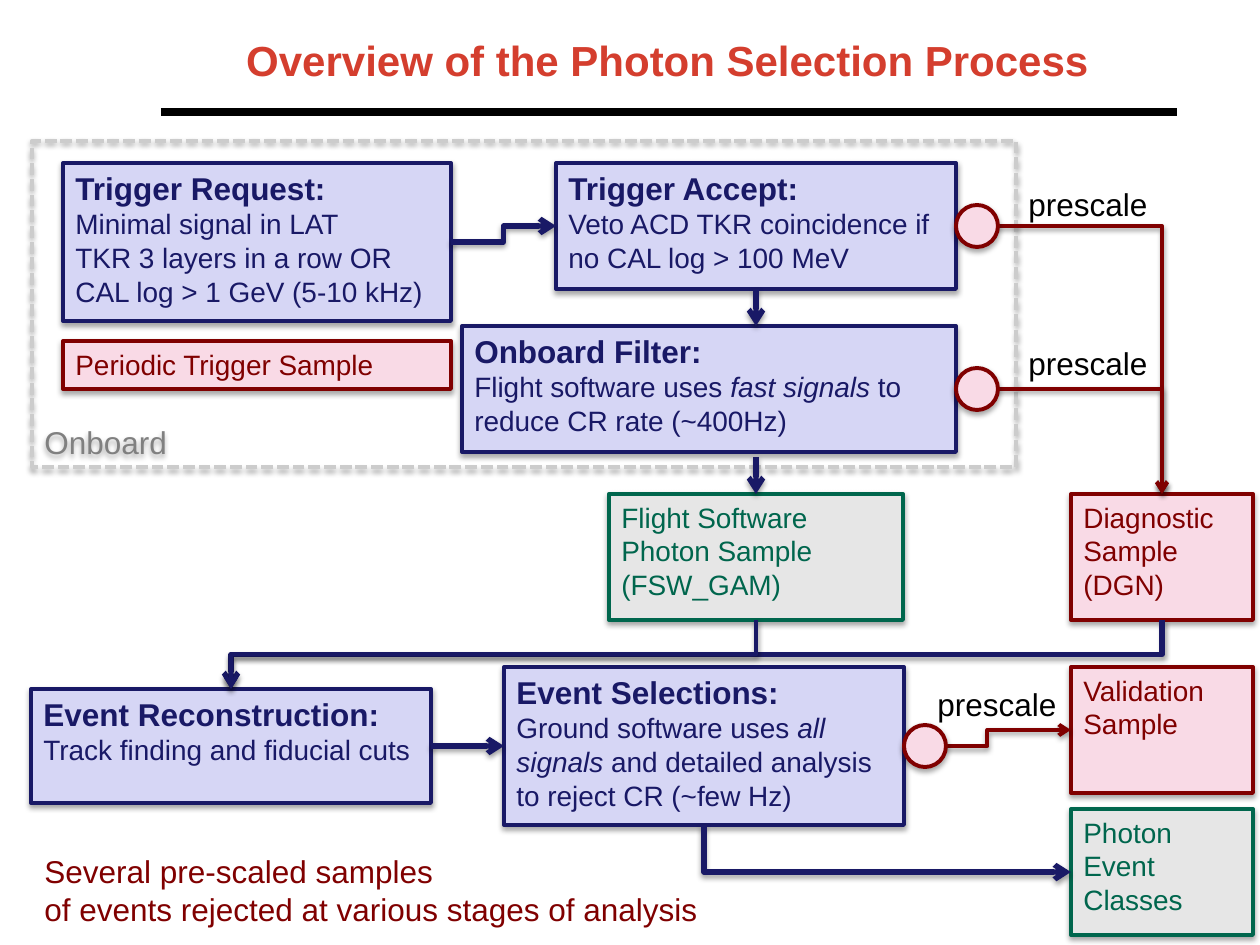
import pptx
import pptx.util
import pptx.dml.color
import pptx.enum.dml
import pptx.enum.shapes
import pptx.enum.text
import pptx.oxml
import pptx.oxml.ns

Pt = pptx.util.Pt
SHAPE = pptx.enum.shapes.MSO_SHAPE
CONNECTOR = pptx.enum.shapes.MSO_CONNECTOR
ANCHOR = pptx.enum.text.MSO_ANCHOR
ALIGN = pptx.enum.text.PP_ALIGN
PX = 914400 // 126
TOP, LEFT, BOTTOM, RIGHT = range(4)

COLORS = {
    "title": "D43E2E", "black": "000000", "navy": "191966", "lavender": "D6D6F5",
    "maroon": "800000", "pink": "F9DAE6", "green": "00664D", "light": "E6E6E6",
    "dash": "CCCCCC", "gray": "808080",
}
STYLES = {
    "step": ("lavender", "navy"),
    "sample": ("pink", "maroon"),
    "photon": ("light", "green"),
}

TITLE = "Overview of the Photon Selection Process"
FRAME = (32, 141, 984, 326)
BOXES = {
    "request": ("step", (63, 163, 388, 158), "Trigger Request:",
                ["Minimal signal in LAT", "TKR 3 layers in a row OR",
                 "CAL log > 1 GeV (5-10 kHz)"]),
    "accept": ("step", (556, 163, 400, 126), "Trigger Accept:",
               ["Veto ACD TKR coincidence if", "no CAL log > 100 MeV"]),
    "filter": ("step", (462, 326, 494, 126), "Onboard Filter:",
               ["Flight software uses *fast signals* to reduce CR rate (~400Hz)"]),
    "reconstruction": ("step", (31, 689, 400, 114), "Event Reconstruction:",
                       ["Track finding and fiducial cuts"]),
    "selections": ("step", (504, 667, 400, 158), "Event Selections:",
                   ["Ground software uses *all*",
                    "*signals* and detailed analysis to reject CR (~few Hz)"]),
    "periodic": ("sample", (63, 341, 388, 48), None, ["Periodic Trigger Sample"]),
    "diagnostic": ("sample", (1071, 494, 182, 126), None,
                   ["Diagnostic", "Sample", "(DGN)"]),
    "validation": ("sample", (1071, 667, 182, 126), None, ["Validation Sample"]),
    "fsw": ("photon", (609, 494, 294, 126), None,
            ["Flight Software", "Photon Sample", "(FSW_GAM)"]),
    "classes": ("photon", (1071, 809, 182, 126), None, ["Photon Event Classes"]),
}
ELBOWS = [
    ("selections", RIGHT, "validation", LEFT, "maroon", 2.25),
    ("accept", RIGHT, "diagnostic", TOP, "maroon", 2.25),
    ("filter", RIGHT, "diagnostic", TOP, "maroon", 2.25),
    ("request", RIGHT, "accept", LEFT, "navy", 3),
    ("diagnostic", BOTTOM, "reconstruction", TOP, "navy", 3),
    ("fsw", BOTTOM, "reconstruction", TOP, "navy", 2.25),
    ("selections", BOTTOM, "classes", LEFT, "navy", 3),
]
PRESCALED = ["accept", "filter", "selections"]
DOT = 42
LABELS = [
    ((1016, 179, 146, 50), ["prescale"], "black"),
    ((1016, 338, 146, 50), ["prescale"], "black"),
    ((925, 679, 146, 50), ["prescale"], "black"),
    ((32, 846, 685, 89), ["Several pre-scaled samples",
                          "of events rejected at various stages of analysis"], "maroon"),
]


def rgb(name):
    return pptx.dml.color.RGBColor.from_string(COLORS[name])


def emu(*values):
    return [round(v * PX) for v in values]


def side(name, site):
    x, y, w, h = BOXES[name][1]
    return [(x + w / 2, y), (x, y + h / 2), (x + w / 2, y + h), (x + w, y + h / 2)][site]


def add_shadow(sp, alpha, dist):
    ns = pptx.oxml.ns.nsdecls("a")
    sp._element.spPr.append(pptx.oxml.parse_xml(
        f'<a:effectLst {ns}><a:outerShdw blurRad="{Pt(3.1)}" dist="{Pt(dist)}" '
        f'dir="5400000" rotWithShape="0"><a:srgbClr val="000000">'
        f'<a:alpha val="{alpha * 1000}"/></a:srgbClr></a:outerShdw></a:effectLst>'))


def style_text(p, size, color, bold=False):
    p.font.name, p.font.size, p.font.bold = "Arial", Pt(size), bold
    p.font.color.rgb = rgb(color)


def write(tf, lines, color, anchor=ANCHOR.TOP):
    tf.vertical_anchor = anchor
    for i, (text, size, bold) in enumerate(lines):
        p = tf.paragraphs[0] if i == 0 else tf.add_paragraph()
        p.alignment = ALIGN.LEFT
        style_text(p, size, color, bold)
        for j, part in enumerate(text.split("*")):
            if part:
                r = p.add_run()
                r.text = part
                if j % 2:
                    r.font.italic = True


def add_box(slide, kind, place, fill, line):
    sp = slide.shapes.add_shape(kind, *emu(*place))
    if fill:
        sp.fill.solid()
        sp.fill.fore_color.rgb = rgb(fill)
    else:
        sp.fill.background()
    sp.line.color.rgb = rgb(line)
    sp.line.width = Pt(2.25)
    add_shadow(sp, 35, 1.8)
    return sp


def add_line(slide, kind, start, end, color, width, arrow=True):
    sp = slide.shapes.add_connector(kind, *emu(*start, *end))
    sp.line.color.rgb = rgb(color)
    sp.line.width = Pt(width)
    ns = pptx.oxml.ns.nsdecls("a")
    if arrow:
        sp.line._get_or_add_ln().append(
            pptx.oxml.parse_xml(f'<a:tailEnd {ns} type="arrow"/>'))
        add_shadow(sp, 38, 1.6)
    else:
        sp._element.spPr.append(pptx.oxml.parse_xml(f"<a:effectLst {ns}/>"))
    return sp


def add_elbow(slide, source, out, target, into, color, width):
    (x1, y1), (x2, y2) = side(source, out), side(target, into)
    start, end = (x1, y1), (x2, y2)
    if out == BOTTOM:
        cx, cy = (x1 + x2) / 2, (y1 + y2) / 2
        w, h = abs(y2 - y1), abs(x2 - x1)
        start, end = (cx - w / 2, cy - h / 2), (cx + w / 2, cy + h / 2)
    sp = add_line(slide, CONNECTOR.ELBOW, start, end, color, width)
    spPr = sp._element.spPr
    if out == BOTTOM:
        spPr.xfrm.set("rot", "5400000")
        if x2 > x1:
            spPr.xfrm.set("flipV", "1")
    if (out, into) in [(RIGHT, TOP), (BOTTOM, LEFT)]:
        spPr.find(pptx.oxml.ns.qn("a:prstGeom")).set("prst", "bentConnector2")


def main():
    prs = pptx.Presentation()
    prs.slide_width, prs.slide_height = pptx.util.Inches(10), pptx.util.Inches(7.5)
    slide = prs.slides.add_slide(prs.slide_layouts[5])

    title = slide.shapes.title
    title.left, title.top, title.width, title.height = emu(156, 14, 1023, 91)
    title.text_frame.text = TITLE
    title.text_frame.vertical_anchor = ANCHOR.MIDDLE
    p = title.text_frame.paragraphs[0]
    p.alignment = ALIGN.CENTER
    style_text(p, 24, "title", True)
    add_line(slide, CONNECTOR.STRAIGHT, (161, 112), (1177, 112), "black", 4.5, arrow=False)

    frame = add_box(slide, SHAPE.RECTANGLE, FRAME, None, "dash")
    frame.line.dash_style = pptx.enum.dml.MSO_LINE.SQUARE_DOT
    write(frame.text_frame, [("Onboard", 18, False)], "gray", ANCHOR.BOTTOM)

    boxes = {}
    for name, (style, place, heading, body) in BOXES.items():
        fill, line = STYLES[style]
        boxes[name] = add_box(slide, SHAPE.RECTANGLE, place, fill, line)
        lines = [(heading, 18, True)] if heading else []
        write(boxes[name].text_frame, lines + [(t, 16, False) for t in body], line)

    for elbow in ELBOWS:
        add_elbow(slide, *elbow)

    x, y = side("accept", BOTTOM)
    top = side("filter", TOP)[1]
    sp = add_line(slide, CONNECTOR.STRAIGHT, (x, y), (x, top), "navy", 3)
    sp.begin_connect(boxes["accept"], BOTTOM)
    x, y = side("fsw", TOP)
    sp = add_line(slide, CONNECTOR.STRAIGHT, (x, y - 37), (x, y), "navy", 3)
    sp.end_connect(boxes["fsw"], TOP)
    sp = add_line(slide, CONNECTOR.STRAIGHT, side("reconstruction", RIGHT),
                  side("selections", LEFT), "navy", 3)
    sp.begin_connect(boxes["reconstruction"], RIGHT)
    sp.end_connect(boxes["selections"], LEFT)

    for name in PRESCALED:
        x, y = side(name, RIGHT)
        add_box(slide, SHAPE.OVAL, (x, y - DOT / 2, DOT, DOT), "pink", "maroon")

    for place, texts, color in LABELS:
        tf = slide.shapes.add_textbox(*emu(*place)).text_frame
        tf.word_wrap = False
        tf.auto_size = pptx.enum.text.MSO_AUTO_SIZE.SHAPE_TO_FIT_TEXT
        write(tf, [(t, 18, False) for t in texts], color)

    prs.save("out.pptx")


if __name__ == "__main__":
    main()
